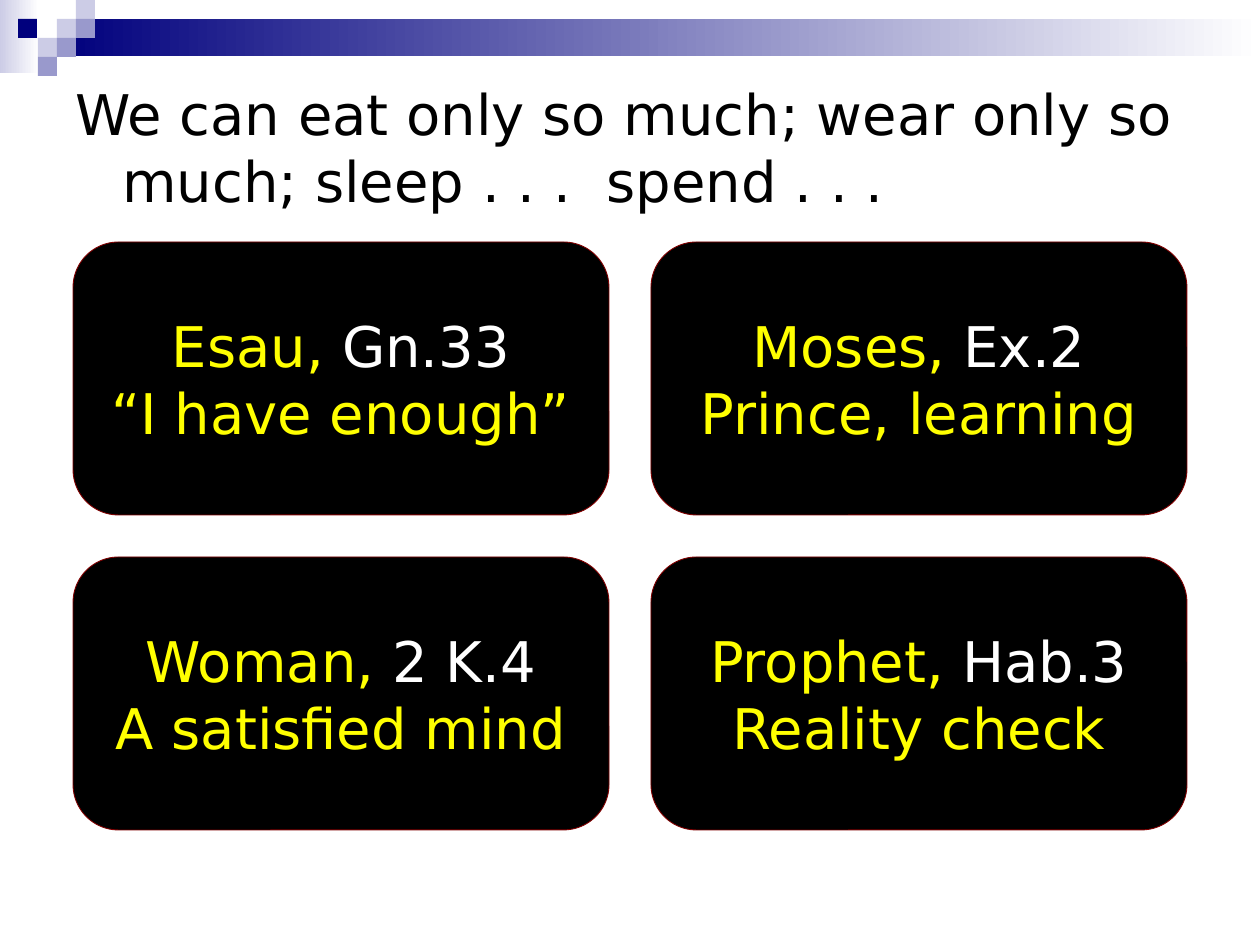
"""Build a slide of four Bible examples of contentment."""
from dataclasses import dataclass

from pptx import Presentation
from pptx import util as u
from pptx.dml.color import RGBColor
from pptx.enum import shapes, text

PX = 914400 / 126


def px(length):
    return u.Emu(round(length * PX))


@dataclass(frozen=True)
class Theme:
    font: str = "DejaVu Sans"
    size: int = 32
    navy: str = "00007D"
    mid: str = "9999CC"
    pale: str = "CCCCE6"
    white: str = "FFFFFF"
    black: str = "000000"
    yellow: str = "FFFF00"
    maroon: str = "800000"


class Deck:
    def __init__(self, theme, width, height):
        self.theme = theme
        self.presentation = Presentation()
        self.presentation.slide_width = px(width)
        self.presentation.slide_height = px(height)
        self.slide = self.presentation.slides.add_slide(
            self.presentation.slide_layouts[6])

    def shape(self, kind, *box):
        item = self.slide.shapes.add_shape(kind, *map(px, box))
        item.shadow.inherit = False
        item.line.fill.background()
        return item

    def tile(self, color, *box):
        tile = self.shape(shapes.MSO_SHAPE.RECTANGLE, *box)
        tile.fill.solid()
        tile.fill.fore_color.rgb = RGBColor.from_string(color)

    def fade(self, start, end, *box):
        band = self.shape(shapes.MSO_SHAPE.RECTANGLE, *box)
        band.fill.gradient()
        band.fill.gradient_angle = 0
        for stop, color in zip(band.fill.gradient_stops, (start, end)):
            stop.color.rgb = RGBColor.from_string(color)

    def run(self, paragraph, wording, color):
        run = paragraph.add_run()
        run.text = wording
        run.font.name = self.theme.font
        run.font.size = u.Pt(self.theme.size)
        run.font.color.rgb = RGBColor.from_string(color)

    def statement(self, wording, hanging, *box):
        frame = self.slide.shapes.add_textbox(*map(px, box)).text_frame
        frame.word_wrap = True
        paragraph = frame.paragraphs[0]
        properties = paragraph._p.get_or_add_pPr()
        properties.set("marL", str(px(hanging)))
        properties.set("indent", str(-px(hanging)))
        self.run(paragraph, wording, self.theme.black)

    def card(self, person, verse, lesson, *box):
        card = self.shape(shapes.MSO_SHAPE.ROUNDED_RECTANGLE, *box)
        card.fill.solid()
        card.fill.fore_color.rgb = RGBColor.from_string(self.theme.black)
        card.line.color.rgb = RGBColor.from_string(self.theme.maroon)
        card.line.width = u.Pt(0.5)
        frame = card.text_frame
        frame.word_wrap = False
        frame.vertical_anchor = text.MSO_ANCHOR.MIDDLE
        heading, detail = frame.paragraphs[0], frame.add_paragraph()
        heading.alignment = detail.alignment = text.PP_ALIGN.CENTER
        self.run(heading, f"{person}, ", self.theme.yellow)
        self.run(heading, verse, self.theme.white)
        self.run(detail, lesson, self.theme.yellow)


def main():
    theme = Theme()
    deck = Deck(theme, 1260, 945)

    deck.fade(theme.pale, theme.white, 0, 0, 39, 73)
    deck.fade(theme.navy, theme.white, 57, 19, 1203, 37)
    tile_size = 19
    tile_lefts = (18, 38, 57, 76)
    mosaic = (
        (2, 1, theme.pale), (3, 0, theme.pale), (3, 1, theme.mid),
        (1, 2, theme.pale), (0, 1, theme.navy), (2, 2, theme.mid),
        (1, 3, theme.mid),
    )
    for column, row, color in mosaic:
        deck.tile(color, tile_lefts[column], row * tile_size,
                  tile_size, tile_size)

    deck.statement(
        "We can eat only so much; wear only so much; sleep . . .  spend . . .",
        47, 63, 73, 1134, 798)

    examples = (
        ("Esau", "Gn.33", "“I have enough”"),
        ("Moses", "Ex.2", "Prince, learning"),
        ("Woman", "2 K.4", "A satisfied mind"),
        ("Prophet", "Hab.3", "Reality check"),
    )
    card_width, card_height = 536, 273
    column_gap, row_gap = 42, 42
    for index, example in enumerate(examples):
        row, column = divmod(index, 2)
        deck.card(*example,
                  73 + column * (card_width + column_gap),
                  242 + row * (card_height + row_gap),
                  card_width, card_height)

    deck.presentation.save("out.pptx")


if __name__ == "__main__":
    main()
